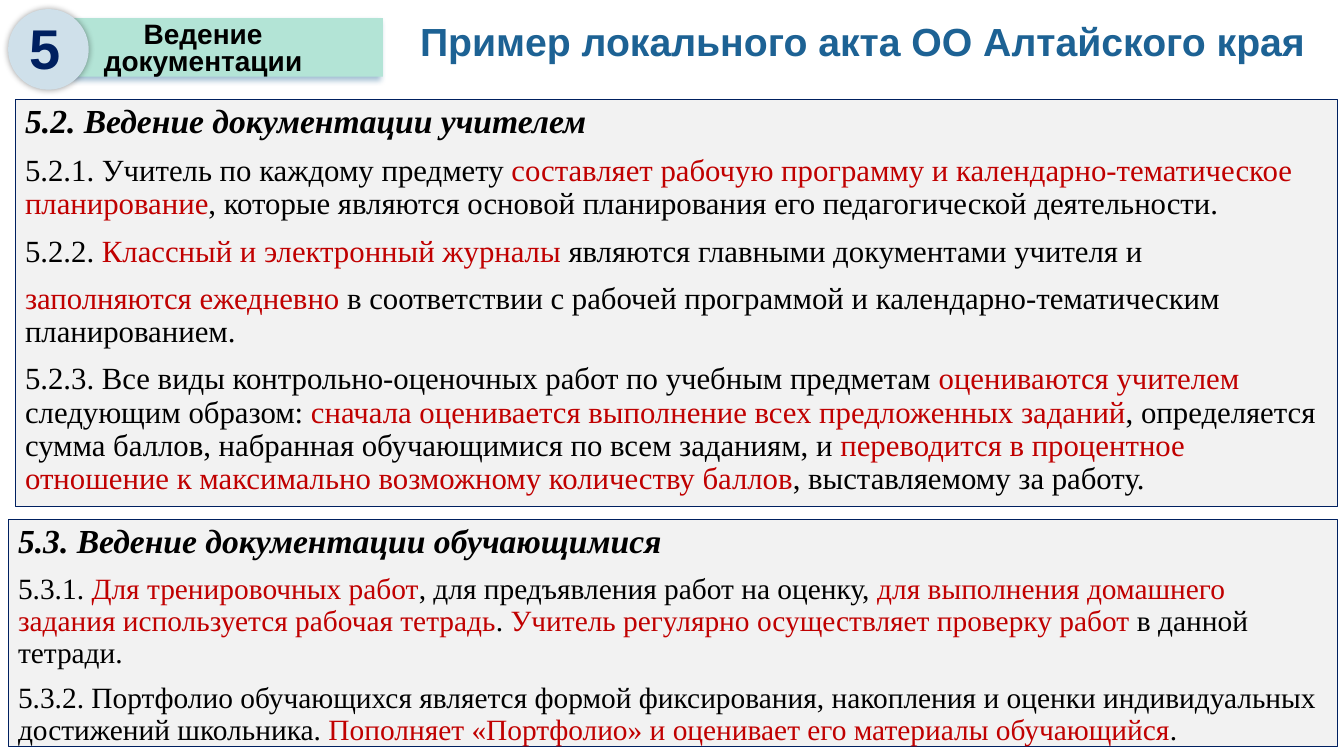
from dataclasses import dataclass

from lxml import etree
from pptx import Presentation
from pptx.dml.color import RGBColor
from pptx.enum.shapes import MSO_SHAPE as Shape
from pptx.enum.text import MSO_ANCHOR as Anchor, PP_ALIGN as Align
from pptx.oxml.ns import qn
from pptx.util import Pt


@dataclass(frozen=True)
class Theme:
    heading_font: str = "Arial"
    body_font: str = "Times New Roman"
    title: str = "1D6294"
    navy: str = "002060"
    black: str = "000000"
    red: str = "C00000"
    mint: str = "B3E4D6"
    pale_blue: str = "CFE0EA"
    panel: str = "F2F2F2"
    title_size: int = 28
    number_size: int = 40
    label_size: int = 20
    panel_head_size: int = 24
    rules_size: int = 22
    pupil_rules_size: int = 21


THEME = Theme()

# Text between asterisks is highlighted in red
TEACHER_RULES = [
    "5.2.1. Учитель по каждому предмету *составляет рабочую программу и "
    "календарно-тематическое планирование*, которые являются основой "
    "планирования его педагогической деятельности.",
    "5.2.2. *Классный и электронный журналы *являются главными документами учителя и",
    "*заполняются ежедневно *в соответствии с рабочей программой и "
    "календарно-тематическим планированием.",
    "5.2.3. Все виды контрольно-оценочных работ по учебным предметам "
    "*оцениваются учителем *следующим образом: *сначала оценивается выполнение "
    "всех предложенных заданий*, определяется сумма баллов, набранная "
    "обучающимися по всем заданиям, и *переводится в процентное отношение к "
    "максимально возможному количеству баллов*, выставляемому за работу.",
]
PUPIL_RULES = [
    "5.3.1. *Для тренировочных работ*, для предъявления работ на оценку, "
    "*для выполнения домашнего задания используется рабочая тетрадь*. "
    "*Учитель регулярно осуществляет проверку работ* в данной тетради.",
    "5.3.2. Портфолио обучающихся является формой фиксирования, накопления и "
    "оценки индивидуальных достижений школьника. "
    "*Пополняет «Портфолио» и оценивает его материалы обучающийся*.",
]


def write(para, text, *, size, font, color=THEME.black, bold=False,
          italic=False, align=Align.LEFT, spacing=1.0, before=0):
    """Fill a paragraph, colouring the parts between asterisks."""
    para.alignment = align
    para.line_spacing = spacing
    para.space_before = Pt(before)
    for index, part in enumerate(text.split("*")):
        if not part:
            continue
        span = para.add_run()
        span.text = part
        span.font.size = Pt(size)
        span.font.name = font
        span.font.bold = bold
        span.font.italic = italic
        span.font.color.rgb = RGBColor.from_string(THEME.red if index % 2 else color)


def add_text(page, text, bounds, anchor=Anchor.TOP, **style):
    box = page.shapes.add_textbox(*map(Pt, bounds))
    box.text_frame.word_wrap = True
    box.text_frame.vertical_anchor = anchor
    write(box.text_frame.paragraphs[0], text, font=THEME.heading_font,
          bold=True, **style)


def add_block(page, kind, bounds, fill, line=None):
    block = page.shapes.add_shape(kind, *map(Pt, bounds))
    block.shadow.inherit = False
    block.fill.solid()
    block.fill.fore_color.rgb = RGBColor.from_string(fill)
    if line:
        block.line.color.rgb = RGBColor.from_string(line)
        block.line.width = Pt(0.75)
    else:
        block.line.fill.background()
    return block


def add_shadow(block, color, blur, distance, angle):
    effects = block.element.spPr.find(qn("a:effectLst"))
    shadow = etree.SubElement(
        effects, qn("a:outerShdw"), blurRad=str(Pt(blur)), dist=str(Pt(distance)),
        dir=str(angle * 60000), algn="ctr", rotWithShape="0")
    tint = etree.SubElement(shadow, qn("a:srgbClr"), val=color)
    etree.SubElement(tint, qn("a:alpha"), val="40000")


def add_panel(page, heading, rules, bounds, size):
    panel = add_block(page, Shape.RECTANGLE, bounds, THEME.panel, THEME.navy)
    frame = panel.text_frame
    frame.word_wrap = True
    frame.vertical_anchor = Anchor.TOP
    write(frame.paragraphs[0], heading, size=THEME.panel_head_size,
          font=THEME.body_font, bold=True, italic=True, spacing=0.9)
    for rule in rules:
        write(frame.add_paragraph(), rule, size=size, font=THEME.body_font,
              spacing=0.9, before=10)


def add_badge(page):
    bar = add_block(page, Shape.RECTANGLE, (52.6, 13, 221, 41.8), THEME.mint)
    add_shadow(bar, THEME.title, blur=4, distance=3, angle=135)
    disc = add_block(page, Shape.OVAL, (5.8, 6.5, 57.6, 57.6), THEME.pale_blue)
    add_shadow(disc, THEME.black, blur=5, distance=0, angle=0)
    add_text(page, "5", (3.6, 5.8, 57.6, 55.4), size=THEME.number_size,
             color=THEME.navy, align=Align.CENTER)
    add_text(page, "Ведение документации", (34.6, 13, 221, 70.6),
             size=THEME.label_size, align=Align.CENTER, spacing=0.8)


def main():
    deck = Presentation()
    deck.slide_width, deck.slide_height = Pt(960), Pt(540)
    page = deck.slides.add_slide(deck.slide_layouts[6])

    # Title and numbered badge
    add_text(page, "Пример локального акта ОО Алтайского края",
             (293, 0, 667, 62), anchor=Anchor.MIDDLE, size=THEME.title_size,
             color=THEME.title, spacing=0.9)
    add_badge(page)

    # Rules for teachers and pupils
    add_panel(page, "5.2. Ведение документации учителем", TEACHER_RULES,
              (10.8, 71.3, 944.6, 290.9), THEME.rules_size)
    add_panel(page, "5.3. Ведение документации обучающимися", PUPIL_RULES,
              (5.8, 370.8, 949.6, 162.7), THEME.pupil_rules_size)

    deck.save("out.pptx")


if __name__ == "__main__":
    main()
